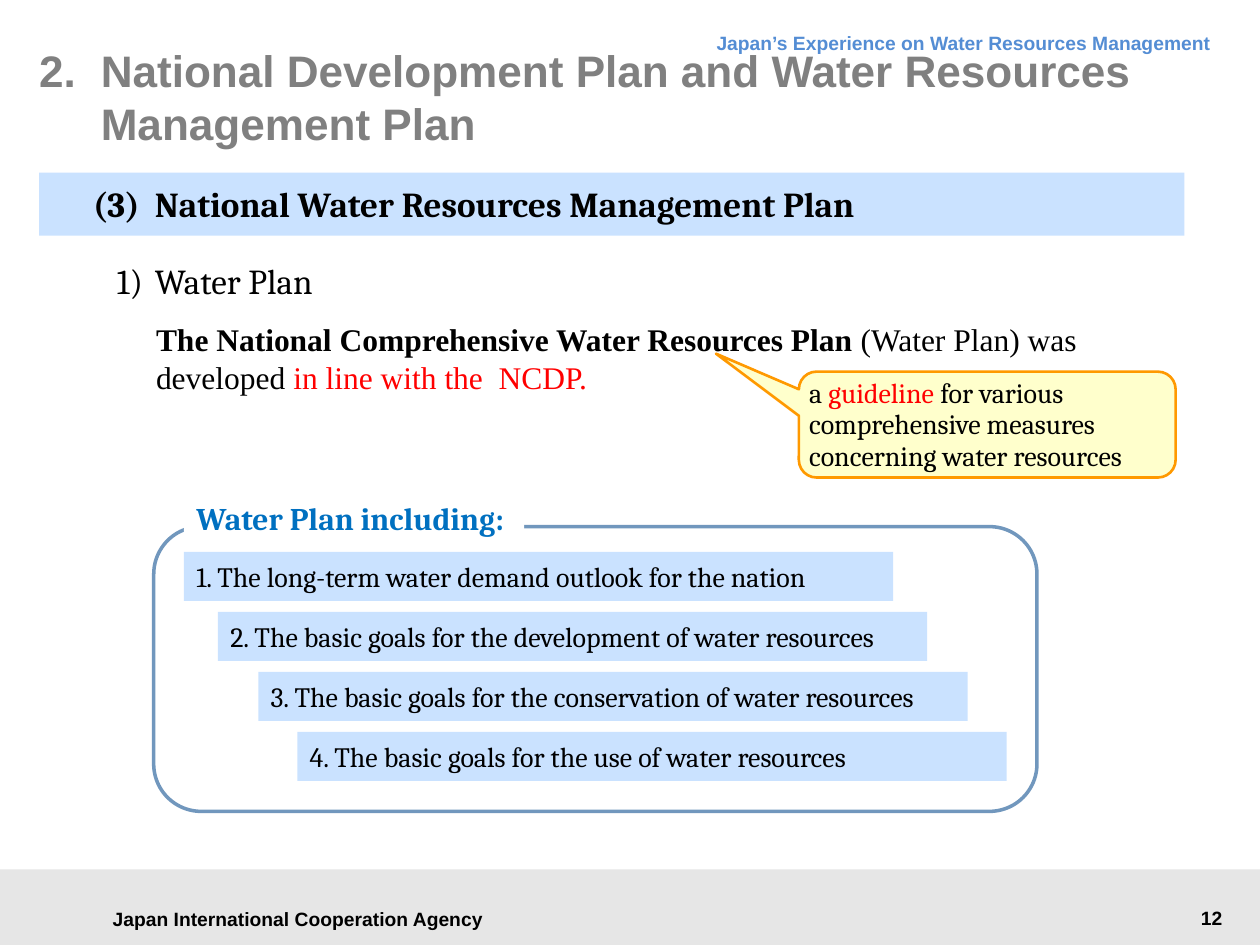
from pptx import Presentation
from pptx import util as u
from pptx.dml.color import RGBColor
from pptx.enum import shapes, text

BLACK = RGBColor(0, 0, 0)
WHITE = RGBColor(255, 255, 255)
GRAY = RGBColor(0x80, 0x80, 0x80)
FOOTER_GRAY = RGBColor(0xE6, 0xE6, 0xE6)
RED = RGBColor(255, 0, 0)
HEADER_BLUE = RGBColor(0x54, 0x8D, 0xD4)
LABEL_BLUE = RGBColor(0, 0x70, 0xC0)
FRAME_BLUE = RGBColor(0x71, 0x97, 0xBD)
PALE_BLUE = RGBColor(0xCA, 0xE2, 0xFF)
PALE_YELLOW = RGBColor(0xFF, 0xFF, 0xCC)
ORANGE = RGBColor(0xFF, 0x99, 0)

WIDTH, HEIGHT = 10, 7.5
FOOTER_HEIGHT = 0.6
DEFAULT_INSETS = (0.1, 0.05, 0.1, 0.05)
LEFT, CENTER, RIGHT = text.PP_ALIGN.LEFT, text.PP_ALIGN.CENTER, text.PP_ALIGN.RIGHT
MIDDLE = text.MSO_ANCHOR.MIDDLE
RECTANGLE = shapes.MSO_SHAPE.RECTANGLE

# Runs are (wording, bold, colour)
PLAN_RUNS = [
    ("The National Comprehensive Water Resources Plan ", True, BLACK),
    ("(Water Plan) was developed ", False, BLACK),
    ("in line with the  NCDP.", False, RED),
]
GUIDELINE_RUNS = [
    ("a ", False, BLACK),
    ("guideline", False, RED),
    (" for various comprehensive measures concerning water resources", False, BLACK),
]
# Contents of the plan: (left edge, wording)
PLAN_ITEMS = [
    (1.46, "1. The long-term water demand outlook for the nation"),
    (1.73, "2. The basic goals for the development of water resources"),
    (2.05, "3. The basic goals for the conservation of water resources"),
    (2.36, "4. The basic goals for the use of water resources"),
]
ITEMS_TOP, ITEM_PITCH, ITEM_SIZE = 4.38, 0.476, (5.63, 0.39)

presentation = Presentation()
presentation.slide_width = u.Inches(WIDTH)
presentation.slide_height = u.Inches(HEIGHT)
slide = presentation.slides.add_slide(presentation.slide_layouts[6])


def add_box(place, kind=RECTANGLE, fill=None, line=None):
    shape = slide.shapes.add_shape(kind, *map(u.Inches, place))
    shape.shadow.inherit = False
    if fill is None:
        shape.fill.background()
    else:
        shape.fill.solid()
        shape.fill.fore_color.rgb = fill
    if line is None:
        shape.line.fill.background()
    else:
        shape.line.color.rgb, shape.line.width = line[0], u.Pt(line[1])
    return shape


def write(shape, runs, size, font="Cambria", align=LEFT, anchor=text.MSO_ANCHOR.TOP,
          insets=DEFAULT_INSETS, hanging=0, spacing=None, wrap=True):
    """Fill a shape with one paragraph; hanging is the indent in inches."""
    frame = shape.text_frame
    frame.word_wrap = wrap
    frame.vertical_anchor = anchor
    (frame.margin_left, frame.margin_top,
     frame.margin_right, frame.margin_bottom) = map(u.Inches, insets)
    paragraph = frame.paragraphs[0]
    paragraph.alignment = align
    if spacing:
        paragraph.line_spacing = u.Pt(spacing)
    if hanging:
        properties = paragraph._p.get_or_add_pPr()
        properties.set("marL", str(u.Inches(hanging)))
        properties.set("indent", str(-u.Inches(hanging)))
    paragraph.font.name, paragraph.font.size = font, u.Pt(size)
    for wording, bold, color in runs:
        run = paragraph.add_run()
        run.text = wording
        run.font.bold = bold
        run.font.color.rgb = color


def add_text(place, runs, size, **style):
    write(slide.shapes.add_textbox(*map(u.Inches, place)), runs, size, **style)


# Header and footer
add_box((0, HEIGHT - FOOTER_HEIGHT, WIDTH, FOOTER_HEIGHT), fill=FOOTER_GRAY)
add_text((0.71, 7.12, 3.31, 0.34), [("Japan International Cooperation Agency", True, BLACK)],
         11, font="Arial", align=CENTER, anchor=MIDDLE)
add_text((2.72, 0.13, 6.99, 0.38),
         [("Japan’s Experience on Water Resources Management", True, HEADER_BLUE)],
         11, font="Arial", align=RIGHT, spacing=18)
add_text((8.23, 7.14, 1.57, 0.29), [("12", True, BLACK)], 11, font="Arial", align=RIGHT)

# Section heading and introduction
add_text((0.83, 2.01, 2.09, 0.44), [("1)\tWater Plan", False, BLACK)], 20, hanging=0.3)
write(add_box((0.31, 1.37, 9.09, 0.5), fill=PALE_BLUE),
      [("(3)\tNational Water Resources Management Plan", True, BLACK)], 20,
      insets=(0.43, 0.08, 0.35, 0.08), hanging=0.49)
add_text((1.14, 2.49, 8.27, 0.71), PLAN_RUNS, 18, font="Times New Roman")

callout = add_box((6.34, 2.95, 2.99, 0.84), shapes.MSO_SHAPE.ROUNDED_RECTANGULAR_CALLOUT,
                  PALE_YELLOW, (ORANGE, 1.5))
callout.adjustments[0], callout.adjustments[1] = -0.72, -0.67
write(callout, GUIDELINE_RUNS, 16, anchor=MIDDLE, insets=(0.04, 0, 0.04, 0), spacing=18)

# Framed list of what the plan includes
add_box((1.22, 4.18, 7.01, 2.26), shapes.MSO_SHAPE.ROUNDED_RECTANGLE, line=(FRAME_BLUE, 2))
write(add_box((1.46, 3.91, 2.7, 0.4), fill=WHITE),
      [("Water Plan including:", True, LABEL_BLUE)], 18, wrap=False)
for row, (left, wording) in enumerate(PLAN_ITEMS):
    bar = add_box((left, ITEMS_TOP + row * ITEM_PITCH, *ITEM_SIZE), fill=PALE_BLUE)
    write(bar, [(wording, False, BLACK)], 16, anchor=MIDDLE)

# Title
add_text((0.31, 0.37, 9.49, 0.79),
         [("2.\tNational Development Plan and Water Resources Management Plan", True, GRAY)],
         25.2, font="Arial", anchor=MIDDLE, insets=(0, 0, 0, 0), hanging=0.49)

presentation.save("out.pptx")
